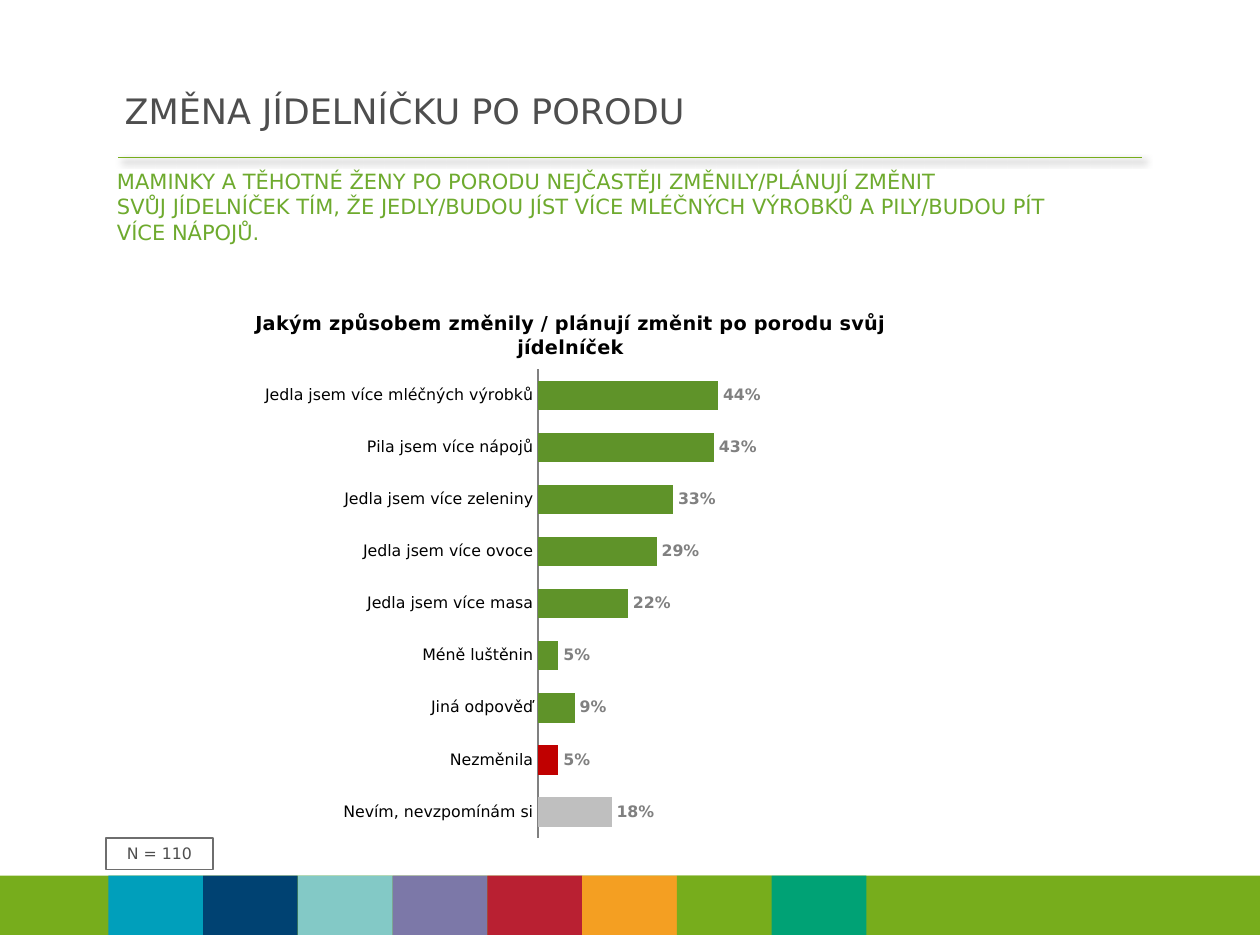
from dataclasses import dataclass

from lxml import etree
from pptx import Presentation
from pptx import util as u
from pptx.chart.data import CategoryChartData
from pptx.dml.color import RGBColor
from pptx.enum import chart as charts, shapes, text
from pptx.oxml import parse_xml
from pptx.oxml.ns import nsdecls, qn

# The slide is a grid of 100 columns and 75 rows, each a tenth of an inch.
CELL = u.Inches(0.1)
COLUMNS, ROWS = 100, 75
FONT = "DejaVu Sans"

BLACK = RGBColor(0x00, 0x00, 0x00)
DARK_GREY = RGBColor(0x4E, 0x4E, 0x4E)
FRAME_GREY = RGBColor(0x6E, 0x6E, 0x6E)
LABEL_GREY = RGBColor(0x80, 0x80, 0x80)
BAR_GREY = RGBColor(0xBF, 0xBF, 0xBF)
BAR_GREEN = RGBColor(0x5F, 0x93, 0x29)
BAR_RED = RGBColor(0xC0, 0x00, 0x00)
TEXT_GREEN = RGBColor(0x6E, 0xAA, 0x2E)
BRAND_GREEN = RGBColor(0x77, 0xAD, 0x1C)
BAND_COLOURS = (
    RGBColor(0x00, 0x9F, 0xBB),
    RGBColor(0x00, 0x42, 0x72),
    RGBColor(0x83, 0xC9, 0xC6),
    RGBColor(0x7C, 0x78, 0xA8),
    RGBColor(0xB9, 0x20, 0x32),
    RGBColor(0xF4, 0x9F, 0x22),
    BRAND_GREEN,
    RGBColor(0x00, 0xA2, 0x75),
)


@dataclass(frozen=True)
class Area:
    column: float
    row: float
    columns: float
    rows: float

    def place(self) -> tuple[int, ...]:
        return tuple(round(n * CELL) for n in (self.column, self.row, self.columns, self.rows))


@dataclass(frozen=True)
class Bar:
    answer: str
    share: float
    colour: RGBColor = BAR_GREEN


BARS = (
    Bar("Jedla jsem více mléčných výrobků", 0.44),
    Bar("Pila jsem více nápojů", 0.43),
    Bar("Jedla jsem více zeleniny", 0.33),
    Bar("Jedla jsem více ovoce", 0.29),
    Bar("Jedla jsem více masa", 0.22),
    Bar("Méně luštěnin", 0.05),
    Bar("Jiná odpověď", 0.09),
    Bar("Nezměnila", 0.05, BAR_RED),
    Bar("Nevím, nevzpomínám si", 0.18, BAR_GREY),
)


def style_font(font, size: float, colour: RGBColor, bold: bool = False) -> None:
    font.name, font.size, font.bold = FONT, u.Pt(size), bold
    font.color.rgb = colour


def add_block(page, area: Area, colour: RGBColor | None):
    block = page.shapes.add_shape(shapes.MSO_SHAPE.RECTANGLE, *area.place())
    block.shadow.inherit = False
    if colour is None:
        block.fill.background()
    else:
        block.fill.solid()
        block.fill.fore_color.rgb = colour
        block.line.fill.background()
    return block


def write_lines(box, lines: tuple[str, ...], size: float, colour: RGBColor):
    """Write one paragraph, with a line break between the lines."""
    box.text_frame.word_wrap = True
    para = box.text_frame.paragraphs[0]
    for number, line in enumerate(lines):
        if number:
            para.add_line_break()
        para.add_run().text = line
    style_font(para.font, size, colour)
    return para


def add_rule(page) -> None:
    left, top, width, _ = Area(9.4, 12.5, 81.2, 0).place()
    rule = page.shapes.add_connector(shapes.MSO_CONNECTOR.STRAIGHT, left, top, left + width, top)
    rule.line.color.rgb = BRAND_GREEN
    rule.line.width = u.Pt(0.75)
    shadow = parse_xml(
        f'<a:effectLst {nsdecls("a")}>'
        f'<a:outerShdw blurRad="{u.Pt(4)}" dist="{u.Pt(3)}" dir="{45 * 60000}" rotWithShape="0">'
        '<a:srgbClr val="000000"><a:alpha val="40000"/></a:srgbClr>'
        "</a:outerShdw></a:effectLst>"
    )
    rule.line._get_or_add_ln().addnext(shadow)


def add_footer_band(page) -> None:
    top, height, width = 69.5, 4.7, 7.52
    add_block(page, Area(0, top, COLUMNS, height), BRAND_GREEN)
    for number, colour in enumerate(BAND_COLOURS):
        add_block(page, Area(8.6 + number * width, top, width, height), colour)


def add_texts(page) -> None:
    title = page.shapes.add_textbox(*Area(8.9, 6.2, 88.7, 5.1).place())
    write_lines(title, ("ZMĚNA JÍDELNÍČKU PO PORODU",), 20, DARK_GREY)
    title.text_frame.vertical_anchor = text.MSO_ANCHOR.MIDDLE

    summary = page.shapes.add_textbox(*Area(8.3, 12.9, 83.5, 8).place())
    write_lines(summary, (
        "MAMINKY A TĚHOTNÉ ŽENY PO PORODU NEJČASTĚJI ZMĚNILY/PLÁNUJÍ ZMĚNIT",
        "SVŮJ JÍDELNÍČEK TÍM, ŽE JEDLY/BUDOU JÍST VÍCE MLÉČNÝCH VÝROBKŮ A PILY/BUDOU PÍT",
        "VÍCE NÁPOJŮ.",
    ), 12, TEXT_GREEN)

    sample = add_block(page, Area(8.4, 66.5, 8.5, 2.5), None)
    sample.line.color.rgb = FRAME_GREY
    sample.line.width = u.Pt(0.75)
    para = write_lines(sample, ("N = 110",), 9, DARK_GREY)
    para.alignment = text.PP_ALIGN.CENTER
    sample.text_frame.auto_size = text.MSO_AUTO_SIZE.SHAPE_TO_FIT_TEXT


def set_plot_area(chart, **shares: float) -> None:
    """Fix the inner plot area, in shares of the chart."""
    plot_area = chart._chartSpace.chart.plotArea
    for old in plot_area.findall(qn("c:layout")):
        plot_area.remove(old)
    layout = parse_xml(f'<c:layout {nsdecls("c")}><c:manualLayout/></c:layout>')
    settings = {"layoutTarget": "inner", "xMode": "edge", "yMode": "edge", **shares}
    for name, value in settings.items():
        etree.SubElement(layout[0], qn(f"c:{name}")).set("val", str(value))
    plot_area.insert(0, layout)


def add_answers_chart(page) -> None:
    data = CategoryChartData(number_format="0%")
    data.categories = [bar.answer for bar in BARS]
    data.add_series("Series 1", [bar.share for bar in BARS])
    area = Area(12.8, 22.9, 65, 45.9)
    chart = page.shapes.add_chart(charts.XL_CHART_TYPE.BAR_CLUSTERED, *area.place(), data).chart
    style_font(chart.font, 18, BLACK)
    chart.has_legend = False
    chart.has_title = True
    heading = chart.chart_title.text_frame
    heading.text = "Jakým způsobem změnily / plánují změnit po porodu svůj jídelníček"
    style_font(heading.paragraphs[0].font, 11, BLACK, bold=True)
    set_plot_area(chart, x=0.46, y=0.14, w=0.5, h=0.81)

    answers, shares = chart.category_axis, chart.value_axis
    answers.reverse_order = True
    answers.major_tick_mark = charts.XL_TICK_MARK.NONE
    answers.format.line.color.rgb = LABEL_GREY
    style_font(answers.tick_labels.font, 9, BLACK)
    shares.minimum_scale, shares.maximum_scale = 0, 1
    shares.has_major_gridlines = False
    shares.visible = False

    plot = chart.plots[0]
    plot.gap_width = 75
    plot.vary_by_categories = False
    series = plot.series[0]
    series.format.fill.solid()
    series.format.fill.fore_color.rgb = BAR_GREEN
    for number, bar in enumerate(BARS):
        if bar.colour != BAR_GREEN:
            fill = series.points[number].format.fill
            fill.solid()
            fill.fore_color.rgb = bar.colour

    labels = series.data_labels
    labels.show_value = True
    labels.number_format, labels.number_format_is_linked = "0%", False
    labels.position = charts.XL_LABEL_POSITION.OUTSIDE_END
    style_font(labels.font, 9, LABEL_GREY, bold=True)


def main() -> None:
    deck = Presentation()
    deck.slide_width, deck.slide_height = COLUMNS * CELL, ROWS * CELL
    page = deck.slides.add_slide(deck.slide_layouts[6])
    add_rule(page)
    add_footer_band(page)
    add_texts(page)
    add_answers_chart(page)
    deck.save("out.pptx")


if __name__ == "__main__":
    main()
